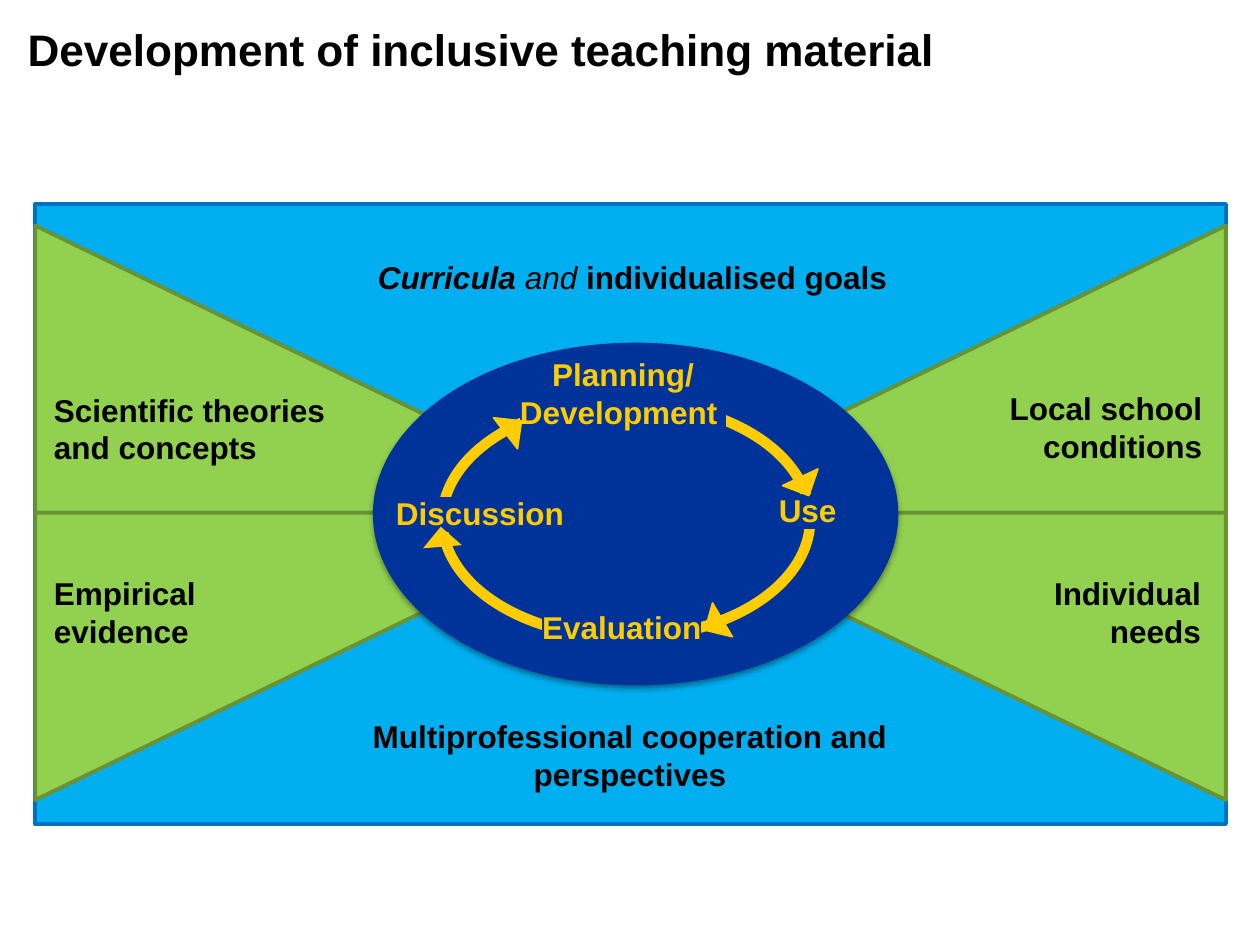
from lxml import etree
from pptx import Presentation
from pptx import util as u
from pptx.dml.color import RGBColor
from pptx.enum import shapes, text
from pptx.oxml.ns import qn

THEME = {
    "font": "Arial", "title": 25.2, "body": 18,
    "black": "000000", "sky": "01AFF0", "sky_line": "0070C0",
    "green": "92D050", "green_line": "689233",
    "navy": "003399", "gold": "FFCC00",
}
BOLD = {"bold": True}
BOLD_ITALIC = {"bold": True, "italic": True}
ITALIC = {"bold": False, "italic": True}

TITLE = ("Development of inclusive teaching material", (0.12, 0.12, 7.88, 0.54))
FACTORS = [
    ([("Curricula", BOLD_ITALIC), (" and ", ITALIC), ("individualised goals", BOLD)],
     (2.27, 2, 5.5, 0.4), "CENTER"),
    ([("Multiprofessional cooperation and perspectives", BOLD)], (2.62, 5.64, 4.76, 0.71), "CENTER"),
    ([("Scientific theories and concepts", BOLD)], (0.33, 3.05, 2.4, 0.71), "LEFT"),
    ([("Empirical evidence", BOLD)], (0.33, 4.51, 1.82, 0.71), "LEFT"),
    ([("Local school conditions", BOLD)], (7.77, 3.04, 1.87, 1.01), "RIGHT"),
    ([("Individual needs", BOLD)], (7.88, 4.51, 1.75, 0.71), "RIGHT"),
]
STAGES = [
    (["Discussion"], (2.91, 3.87, 1.8, 0.4)),
    (["Evaluation"], (4.07, 4.78, 1.73, 0.4)),
    (["Use"], (5.64, 3.85, 1.54, 0.4)),
    (["Planning/", "Development "], (2.95, 2.77, 3.99, 0.71)),
]
ARROWHEADS = [
    (3.92, 3.31, 52.2, "gold"),
    (6.23, 3.78, 154.8, "gold"),
    (3.35, 4.18, 355.4, None),
    (5.51, 4.88, 239.6, "gold"),
]
LEFT, TOP, WIDTH, HALF = 0.28, 1.62, 9.45, 2.46
WEDGE_W, WEDGE_H, WEDGE_TOP = 4.7, 2.28, 1.79


def colour(name):
    return RGBColor.from_string(THEME[name])


def add_figure(s, kind, box, fill=None, line=None, weight=1, rotation=0):
    sp = s.shapes.add_shape(getattr(shapes.MSO_SHAPE, kind), *map(u.Inches, box))
    sp.shadow.inherit = False
    sp.rotation = rotation
    for fmt, name in ((sp.fill, fill), (sp.line.fill, line)):
        if name:
            fmt.solid()
            fmt.fore_color.rgb = colour(name)
        else:
            fmt.background()
    if line:
        sp.line.width = u.Pt(weight)
    return sp


def add_label(s, paragraphs, box, align="LEFT", size="body", ink="black", highlight=None):
    tf = s.shapes.add_textbox(*map(u.Inches, box)).text_frame
    tf.word_wrap = True
    for i, runs in enumerate(paragraphs):
        p = tf.paragraphs[0] if i == 0 else tf.add_paragraph()
        p.alignment = getattr(text.PP_ALIGN, align)
        for words, style in runs:
            r = p.add_run()
            r.text = words
            formats = {"name": THEME["font"], "size": u.Pt(THEME[size]), **style}
            for key, value in formats.items():
                setattr(r.font, key, value)
            r.font.color.rgb = colour(ink)
            if highlight:
                mark = etree.Element(qn("a:highlight"))
                etree.SubElement(mark, qn("a:srgbClr"), val=THEME[highlight])
                r.font.fill._xPr.find(qn("a:solidFill")).addnext(mark)
    return tf


def add_soft_shadow(sp):
    effects = sp.element.spPr.find(qn("a:effectLst"))
    shadow = etree.SubElement(effects, qn("a:outerShdw"), blurRad=str(u.Pt(3.1)),
                              dist=str(u.Pt(1.6)), dir="5400000", rotWithShape="0")
    tint = etree.SubElement(shadow, qn("a:srgbClr"), val=THEME["black"])
    etree.SubElement(tint, qn("a:alpha"), val="38000")


def main():
    prs = Presentation()
    prs.slide_width, prs.slide_height = u.Inches(10), u.Inches(7.5)
    s = prs.slides.add_slide(prs.slide_layouts[6])

    title, box = TITLE
    tf = add_label(s, [[(title, BOLD)]], box, size="title")
    tf.vertical_anchor = text.MSO_ANCHOR.MIDDLE

    for row in (1, 0):
        add_figure(s, "RECTANGLE", (LEFT, TOP + row * HALF, WIDTH, HALF), "sky", "sky_line", 2.25)

    for col in (0, 1):
        for row in (0, 1):
            box = (LEFT + col * (WIDTH - WEDGE_W), WEDGE_TOP + row * WEDGE_H, WEDGE_W, WEDGE_H)
            sp = add_figure(s, "RIGHT_TRIANGLE", box, "green", "green_line", 2.25)
            xfrm = sp.element.spPr.find(qn("a:xfrm"))
            xfrm.set("flipH", str(col))
            xfrm.set("flipV", str(row))

    for runs, box, align in FACTORS:
        add_label(s, [runs], box, align)

    add_soft_shadow(add_figure(s, "OVAL", (2.96, 2.72, 4.17, 2.72), "navy"))
    add_figure(s, "OVAL", (3.51, 3.19, 2.92, 1.87), line="gold", weight=6)

    for lines, box in STAGES:
        add_label(s, [[(words, BOLD)] for words in lines], box, "CENTER",
                  ink="gold", highlight="navy")

    for x, y, angle, line in ARROWHEADS:
        add_figure(s, "ISOSCELES_TRIANGLE", (x, y, 0.31, 0.16), "gold", line, rotation=angle)

    prs.save("out.pptx")


if __name__ == "__main__":
    main()
